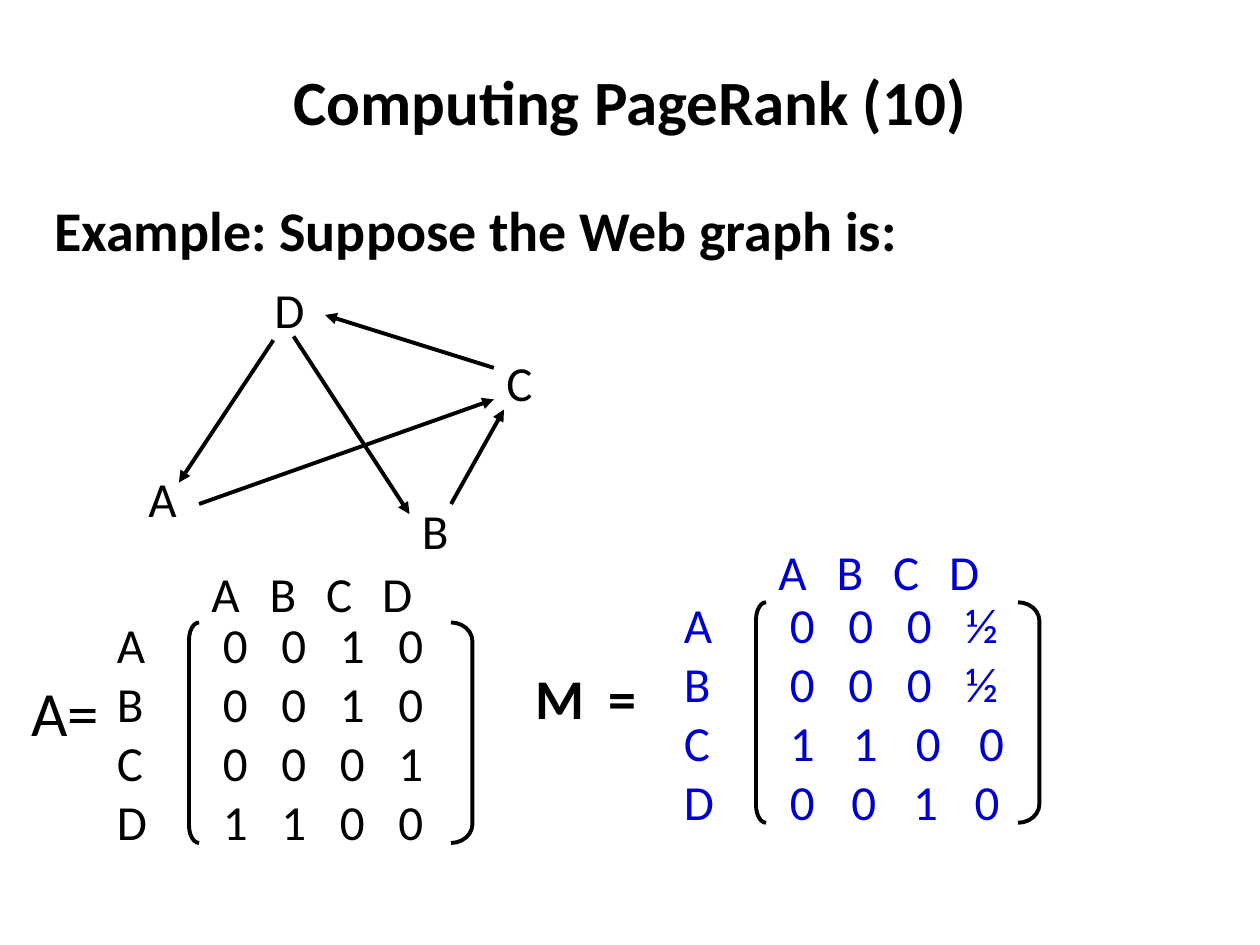
from dataclasses import dataclass

from lxml.etree import SubElement
from pptx import Presentation
from pptx.dml.color import RGBColor
from pptx.enum.shapes import MSO_CONNECTOR, MSO_SHAPE
from pptx.enum.text import MSO_ANCHOR, MSO_AUTO_SIZE, PP_ALIGN
from pptx.oxml.ns import qn
from pptx.util import Inches, Pt

COLORS = {"ink": "000000", "blue": "0000CC"}
FONT = "Calibri"
LETTERS = "ABCD"


@dataclass
class Node:
    name: str
    left: float
    top: float


@dataclass
class Edge:
    start: tuple[float, float]
    end: tuple[float, float]


@dataclass
class Row:
    text: str
    spacing: float = 0  # extra points after each character


@dataclass
class Matrix:
    label_left: float
    left: float
    top: float
    header_top: float
    color: str
    rows: list[Row]


NODES = [
    Node("A", 1.08, 3.67),
    Node("B", 3.25, 3.92),
    Node("C", 3.92, 2.75),
    Node("D", 2.08, 2.17),
]
EDGES = [
    Edge((2.33, 2.67), (3.25, 4.08)),
    Edge((3.92, 2.92), (2.58, 2.5)),
    Edge((1.58, 4), (3.92, 3.17)),
    Edge((2.17, 2.7), (1.42, 3.83)),
    Edge((3.58, 4), (4, 3.25)),
]
MATRICES = [
    Matrix(0.83, 1.67, 4.83, 4.42, "ink",
           [Row("0 0 1 0", 6.5), Row("0 0 1 0", 6.5),
            Row("0 0 0 1", 6.5), Row("1 1 0 0", 6.5)]),
    Matrix(5.33, 6.17, 4.67, 4.25, "blue",
           [Row("0 0 0 ½", 6.5), Row("0 0 0 ½", 6.5),
            Row("1 1 0 0", 7.8), Row("0 0 1 0", 7.4)]),
]


def write(para, text: str, *, size: float = 28, color: str = "ink", bold: bool = False,
          align=PP_ALIGN.LEFT, indent: float = 0, spacing: float = 0) -> None:
    """Write one formatted paragraph without a bullet."""
    para.alignment = align
    span = para.add_run()
    span.text = text
    span.font.name = FONT
    span.font.size = Pt(size)
    span.font.bold = bold
    span.font.color.rgb = RGBColor.from_string(COLORS[color])
    if spacing:
        span._r.get_or_add_rPr().set("spc", str(round(spacing * 100)))
    properties = para._p.get_or_add_pPr()
    properties.set("marL", str(int(Inches(indent))))
    properties.set("indent", "0")
    SubElement(properties, qn("a:buNone"))


def place(shape, left: float, top: float, width: float, height: float) -> None:
    shape.left, shape.top = Inches(left), Inches(top)
    shape.width, shape.height = Inches(width), Inches(height)


def add_text(page, left: float, top: float, width: float, height: float,
             rows: list[Row], **style) -> None:
    box = page.shapes.add_textbox(Inches(left), Inches(top), Inches(width), Inches(height))
    frame = box.text_frame
    frame.word_wrap = True
    for index, row in enumerate(rows):
        para = frame.add_paragraph() if index else frame.paragraphs[0]
        write(para, row.text, spacing=row.spacing, **style)


def add_arrow(page, edge: Edge) -> None:
    line = page.shapes.add_connector(
        MSO_CONNECTOR.STRAIGHT, *(Inches(value) for value in edge.start + edge.end))
    line.line.color.rgb = RGBColor.from_string(COLORS["ink"])
    line.line.width = Pt(2.25)
    SubElement(line.line._get_or_add_ln(), qn("a:tailEnd"), type="triangle")
    SubElement(line._element.spPr, qn("a:effectLst"))


def add_bracket(page, left: float, top: float, width: float, curve: float,
                flipped: bool = False) -> None:
    bracket = page.shapes.add_shape(
        MSO_SHAPE.LEFT_BRACKET, Inches(left), Inches(top), Inches(width), Inches(1.75))
    bracket.adjustments[0] = curve
    bracket.shadow.inherit = False
    bracket.fill.background()
    bracket.line.color.rgb = RGBColor.from_string(COLORS["ink"])
    bracket.line.width = Pt(2.25)
    if flipped:
        bracket._element.spPr.xfrm.set("flipH", "1")


def add_matrix(page, matrix: Matrix) -> None:
    left, top, color = matrix.left, matrix.top, matrix.color
    add_text(page, left, top, 2.05, 1.97, matrix.rows, color=color)
    add_bracket(page, left - 0.17, top + 0.11, 0.08, 1.75)
    add_bracket(page, left + 1.91, top + 0.11, 0.17, 0.875, flipped=True)
    labels = [Row(letter) for letter in LETTERS]
    add_text(page, matrix.label_left, top, 0.48, 1.97, labels, color=color)
    add_text(page, left - 0.09, matrix.header_top, 2.08, 0.57,
             [Row(" ".join(LETTERS), 5.4)], color=color)


def main() -> None:
    deck = Presentation()
    deck.slide_width, deck.slide_height = Inches(10), Inches(7.5)
    page = deck.slides.add_slide(deck.slide_layouts[1])

    # Title
    title = page.shapes.title
    place(title, 0.75, 0.42, 8.5, 0.75)
    title.text_frame.vertical_anchor = MSO_ANCHOR.MIDDLE
    write(title.text_frame.paragraphs[0], "Computing PageRank (10)",
          size=36, bold=True, align=PP_ALIGN.CENTER)

    # Body: example line, and the name of the second matrix below the graph
    body = page.placeholders[1]
    place(body, 0.33, 1.5, 9.42, 5.67)
    frame = body.text_frame
    frame.auto_size = MSO_AUTO_SIZE.NONE
    write(frame.paragraphs[0], "Example: Suppose the Web graph is:", size=32, bold=True)
    name = frame.add_paragraph()
    name.space_before = Pt(229)
    write(name, "M =", size=32, bold=True, indent=3.82, spacing=3.2)

    # Web graph
    for edge in EDGES:
        add_arrow(page, edge)
    for node in NODES:
        add_text(page, node.left, node.top, 0.48, 0.57, [Row(node.name)])

    # Matrices
    for matrix in MATRICES:
        add_matrix(page, matrix)
    add_text(page, 0.15, 5.3, 0.85, 0.7, [Row("A=")], size=36)

    deck.save("out.pptx")


if __name__ == "__main__":
    main()
